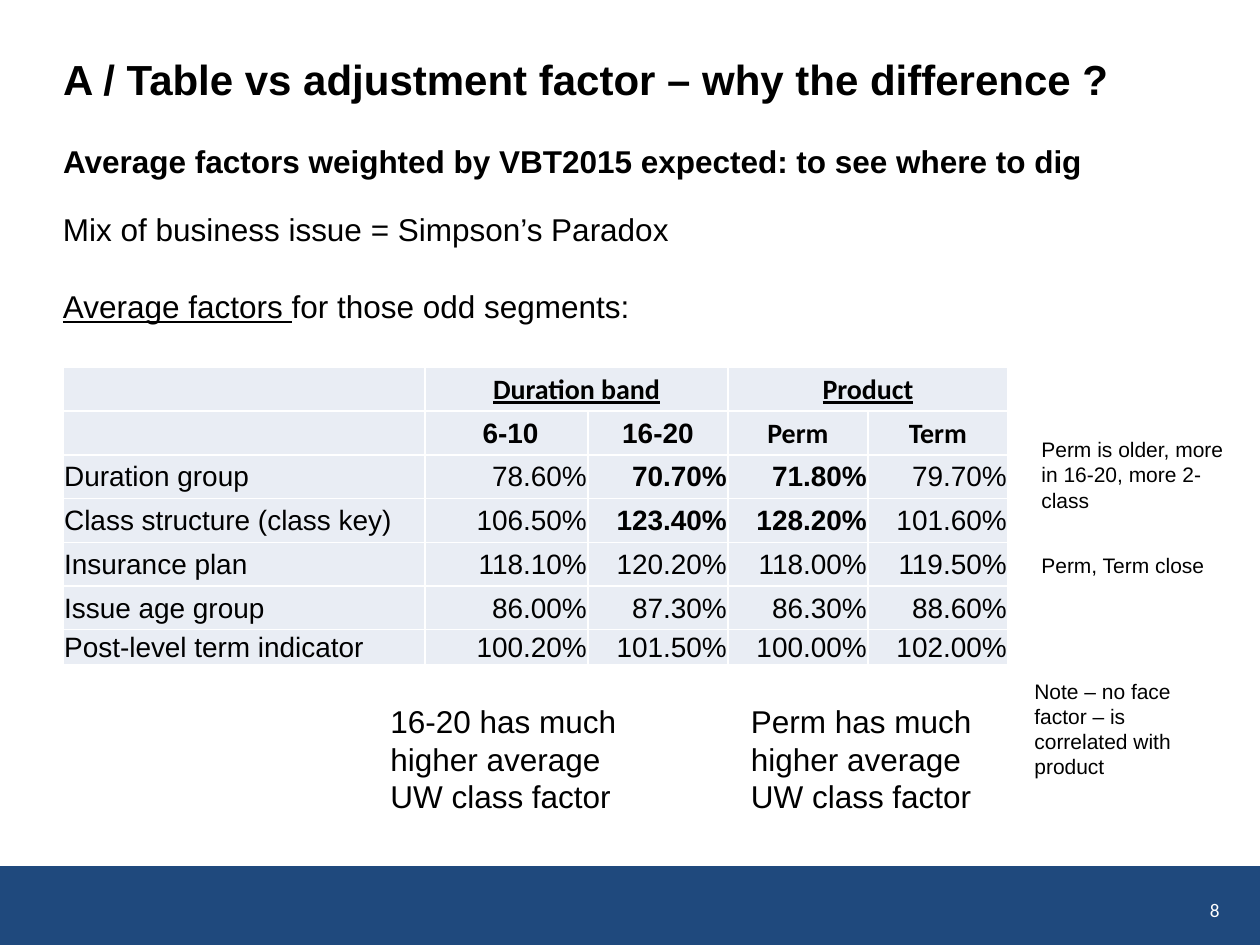
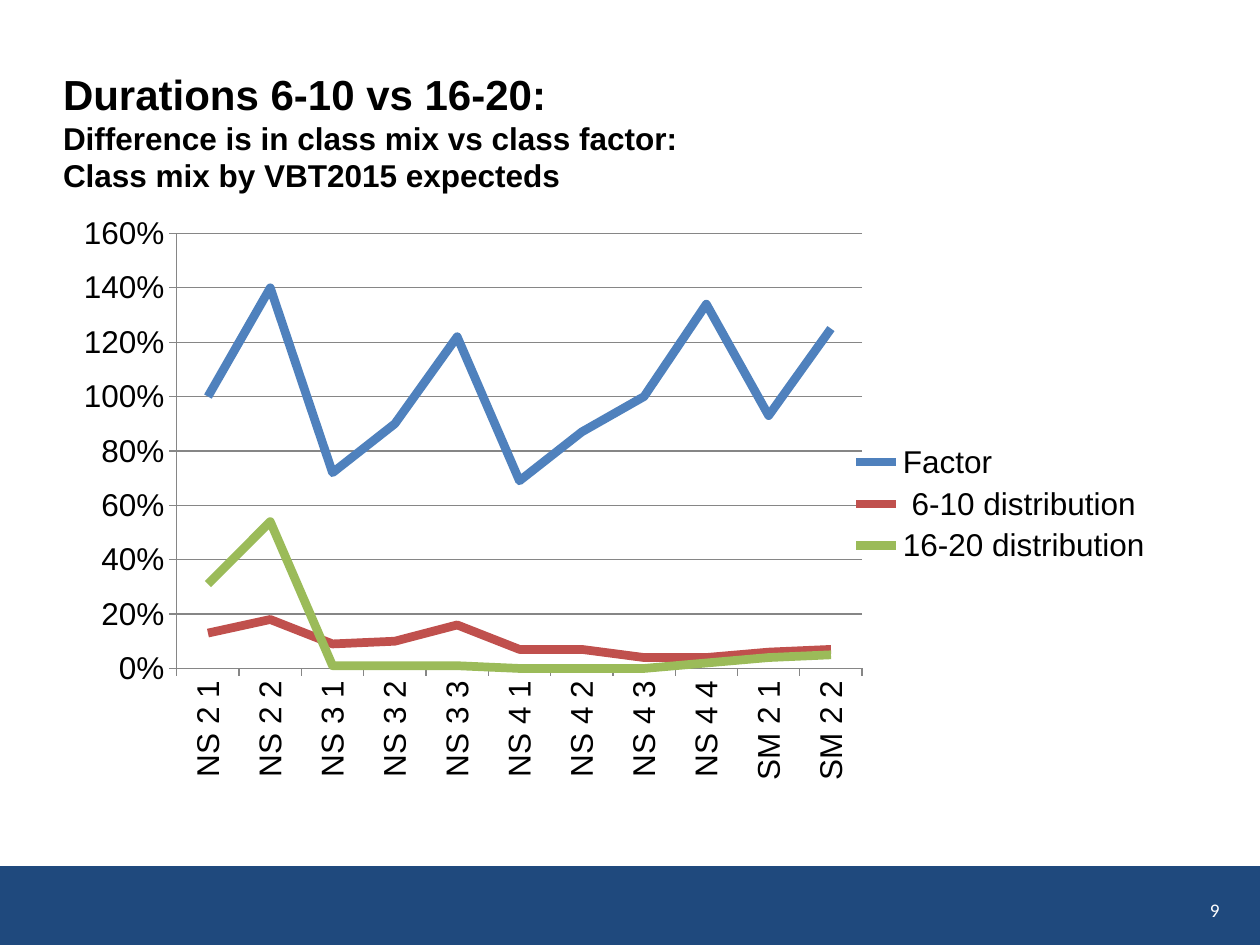
import pptx
import pptx.chart.data
import pptx.dml.color
import pptx.enum.chart
import pptx.enum.shapes
import pptx.enum.text
import pptx.oxml
import pptx.oxml.ns
import pptx.util

Pt = pptx.util.Pt
RGB = pptx.dml.color.RGBColor.from_string
ALIGN = pptx.enum.text.PP_ALIGN
MIDDLE = pptx.enum.text.MSO_ANCHOR.MIDDLE
COLORS = {
    "band": "1F497D", "cell": "E9EDF4", "text": "000000", "white": "FFFFFF", "grid": "868686",
    "factor": "4F81BD", "early": "C0504D", "late": "9BBB59",
}
MARGIN = 36


def write(para, text, size=18, font="Arial", color="text", bold=False, underline=False,
          align=ALIGN.LEFT, space_before=0):
    """Add one formatted run to a paragraph and set the paragraph's layout."""
    para.alignment = align
    para.space_before = Pt(space_before)
    span = para.add_run()
    span.text = text
    span.font.size = Pt(size)
    span.font.name = font
    span.font.bold = bold
    span.font.underline = underline
    span.font.color.rgb = RGB(COLORS[color])


def add_page(number, title_top, title, subtitles, gap=0):
    """Add a slide with the bottom band, its number and a title with smaller lines below."""
    page = deck.slides.add_slide(deck.slide_layouts[5])
    band = page.shapes.add_shape(pptx.enum.shapes.MSO_SHAPE.RECTANGLE, 0, Pt(495), Pt(720), Pt(45))
    band.shadow.inherit = False
    band.fill.solid()
    band.fill.fore_color.rgb = RGB(COLORS["band"])
    band.line.fill.background()

    heading = page.shapes.title
    heading.left, heading.top, heading.width, heading.height = Pt(MARGIN), Pt(title_top), Pt(648), Pt(90)
    frame = heading.text_frame
    frame.margin_left = frame.margin_right = frame.margin_top = frame.margin_bottom = 0
    frame.vertical_anchor = MIDDLE
    frame.auto_size = pptx.enum.text.MSO_AUTO_SIZE.NONE
    write(frame.paragraphs[0], title, size=24, bold=True)
    for subtitle in subtitles:
        write(frame.add_paragraph(), subtitle, bold=True, space_before=gap)

    footer = page.shapes.add_textbox(Pt(666), Pt(512), Pt(38), Pt(16)).text_frame
    footer.word_wrap = True
    footer.vertical_anchor = MIDDLE
    write(footer.paragraphs[0], number, size=11, font="Calibri", color="white", align=ALIGN.RIGHT)
    return page


deck = pptx.Presentation()
deck.slide_width, deck.slide_height = Pt(720), Pt(540)

# Average factors table
page = add_page("8", 21.6, "A / Table vs adjustment factor – why the difference ?",
                ["Average factors weighted by VBT2015 expected: to see where to dig"], gap=22)

intro = page.shapes.add_textbox(Pt(MARGIN), Pt(120), Pt(648), Pt(90)).text_frame
intro.word_wrap = True
intro.margin_left = intro.margin_right = intro.margin_top = intro.margin_bottom = 0
write(intro.paragraphs[0], "Mix of business issue = Simpson’s Paradox")
segments = intro.add_paragraph()
write(segments, "Average factors ", underline=True, space_before=22.5)
write(segments, "for those odd segments:", space_before=22.5)

rows = [
    ["", "Duration band", "", "Product", ""],
    ["", " 6-10", "16-20", "Perm", "Term"],
    ["Duration group", "78.60%", "70.70%", "71.80%", "79.70%"],
    ["Class structure (class key)", "106.50%", "123.40%", "128.20%", "101.60%"],
    ["Insurance plan", "118.10%", "120.20%", "118.00%", "119.50%"],
    ["Issue age group", "86.00%", "87.30%", "86.30%", "88.60%"],
    ["Post-level term indicator", "100.20%", "101.50%", "100.00%", "102.00%"],
]
column_widths = [207, 93, 80, 80, 80]
row_heights = [25] * 6 + [19]
calibri_labels = {"Duration band", "Product", "Perm", "Term"}
standout_values = {"70.70%", "71.80%", "123.40%", "128.20%"}

table = page.shapes.add_table(len(rows), len(column_widths), Pt(MARGIN), Pt(210),
                              Pt(sum(column_widths)), Pt(sum(row_heights))).table
table.first_row = table.horz_banding = False
for column, width in zip(table.columns, column_widths):
    column.width = Pt(width)
for row, height in zip(table.rows, row_heights):
    row.height = Pt(height)
for first in (1, 3):
    table.cell(0, first).merge(table.cell(0, first + 1))

for r, values in enumerate(rows):
    for c, value in enumerate(values):
        cell = table.cell(r, c)
        cell.fill.solid()
        cell.fill.fore_color.rgb = RGB(COLORS["cell"])
        cell.margin_left = cell.margin_right = cell.margin_top = Pt(0.7)
        cell.margin_bottom = 0
        cell.vertical_anchor = MIDDLE
        if value:
            align = ALIGN.CENTER if r < 2 else ALIGN.RIGHT if c else ALIGN.LEFT
            write(cell.text_frame.paragraphs[0], value, size=16,
                  font="Calibri" if value in calibri_labels else "Arial",
                  bold=r < 2 or value in standout_values, underline=r == 0, align=align)

notes = [
    (216, 397.5, 168, 73, 18, "16-20 has much higher average UW class factor"),
    (422, 397.5, 168, 73, 18, "Perm has much higher average UW class factor"),
    (588, 312, 120, 22, 12, "Perm, Term close"),
    (588, 246, 120, 51, 12, "Perm is older, more in 16-20, more 2-class"),
    (584, 384, 120, 66, 12, "Note – no face factor – is correlated with product"),
]
for left, top, width, height, size, text in notes:
    note = page.shapes.add_textbox(Pt(left), Pt(top), Pt(width), Pt(height)).text_frame
    note.word_wrap = True
    write(note.paragraphs[0], text, size=size)

# Class mix chart
page = add_page("9", 30, "Durations 6-10 vs 16-20:",
                ["Difference is in class mix vs class factor:", "Class mix by VBT2015 expecteds"])

data = pptx.chart.data.CategoryChartData(number_format="0%")
data.categories = ["NS 2 1", "NS 2 2", "NS 3 1", "NS 3 2", "NS 3 3", "NS 4 1",
                   "NS 4 2", "NS 4 3", "NS 4 4", "SM 2 1", "SM 2 2"]
data.add_series("Factor", [1, 1.4, 0.72, 0.9, 1.22, 0.69, 0.87, 1, 1.34, 0.93, 1.25])
data.add_series(" 6-10 distribution", [0.13, 0.18, 0.09, 0.1, 0.16, 0.07, 0.07, 0.04, 0.04, 0.06, 0.07])
data.add_series("16-20 distribution", [0.31, 0.54, 0.01, 0.01, 0.01, 0, 0, 0, 0.02, 0.04, 0.05])
chart = page.shapes.add_chart(pptx.enum.chart.XL_CHART_TYPE.LINE, Pt(24), Pt(120),
                              Pt(642), Pt(336), data).chart
chart.has_title = False
chart.font.size = Pt(18)
chart.font.name = "Arial"
chart.font.color.rgb = RGB(COLORS["text"])
chart.has_legend = True
chart.legend.position = pptx.enum.chart.XL_LEGEND_POSITION.RIGHT
chart.legend.include_in_layout = False

plot = chart.plots[0]
plot.vary_by_categories = False
for series, color in zip(plot.series, ("factor", "early", "late")):
    series.smooth = False
    series.marker.style = pptx.enum.chart.XL_MARKER_STYLE.NONE
    series.format.line.width = Pt(5)
    series.format.line.color.rgb = RGB(COLORS[color])

value_axis = chart.value_axis
value_axis.minimum_scale, value_axis.maximum_scale, value_axis.major_unit = 0, 1.6, 0.2
value_axis.tick_labels.number_format = "0%"
value_axis.tick_labels.number_format_is_linked = False
value_axis.has_major_gridlines = True
for axis in (value_axis, chart.category_axis):
    axis.major_tick_mark = pptx.enum.chart.XL_TICK_MARK.OUTSIDE
    axis.tick_labels.font.size = Pt(18)
for line in (value_axis.format.line, chart.category_axis.format.line, value_axis.major_gridlines.format.line):
    line.width = Pt(0.75)
    line.color.rgb = RGB(COLORS["grid"])

qn = pptx.oxml.ns.qn
chart.category_axis._element.find(qn("c:txPr")).find(qn("a:bodyPr")).set("rot", "-5400000")
plot_area = chart._chartSpace.chart.plotArea
for layout in plot_area.findall(qn("c:layout")):
    plot_area.remove(layout)
edges = "".join(f'<c:{name} val="{value}"/>' for name, value in [
    ("layoutTarget", "inner"), ("xMode", "edge"), ("yMode", "edge"),
    ("x", 0.12), ("y", 0.04), ("w", 0.61), ("h", 0.74)])
plot_area.insert(0, pptx.oxml.parse_xml(
    f'<c:layout {pptx.oxml.ns.nsdecls("c")}><c:manualLayout>{edges}</c:manualLayout></c:layout>'))

deck.save("out.pptx")
